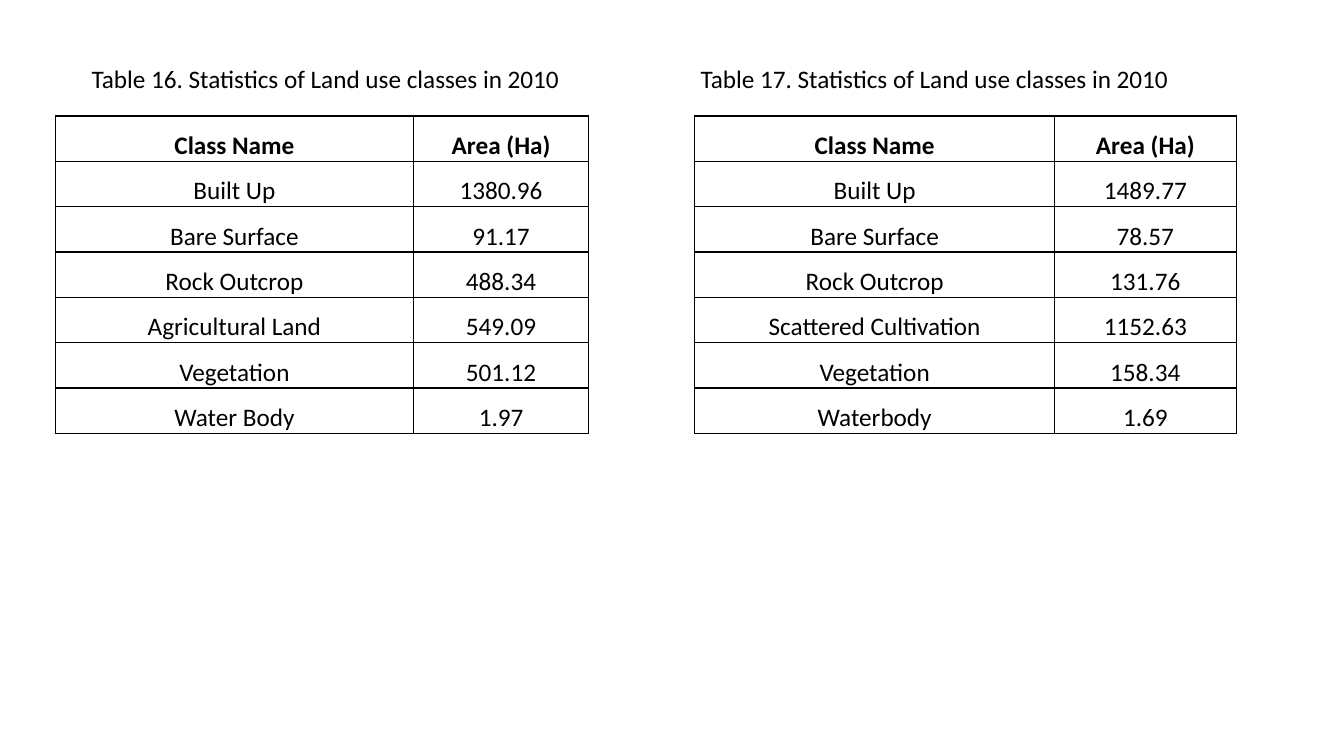
"""Build a slide with two land use tables, each under its caption."""
from lxml.etree import SubElement
from pptx import Presentation
from pptx.dml.color import RGBColor
from pptx.enum.text import MSO_ANCHOR, MSO_AUTO_SIZE, PP_ALIGN
from pptx.oxml.ns import qn
from pptx.util import Inches, Pt

BLACK = RGBColor(0, 0, 0)
HEADER = ("Class Name", "Area (Ha)")
ROW_HEIGHT = 0.45
TABLE_TOP = 1.15
CAPTION_TOP = 0.58
CELL_FORMAT = {
    "vertical_anchor": MSO_ANCHOR.BOTTOM,
    "margin_left": Inches(0.07),
    "margin_right": Inches(0.07),
    "margin_top": 0,
    "margin_bottom": 0,
}
LAND_USE = [
    {
        "caption": "Table 16. Statistics of Land use classes in 2010",
        "caption_left": 0.81,
        "left": 0.55,
        "widths": (3.55, 1.74),
        "areas": [
            ("Built Up", "1380.96"),
            ("Bare Surface", "91.17"),
            ("Rock Outcrop", "488.34"),
            ("Agricultural Land", "549.09"),
            ("Vegetation", "501.12"),
            ("Water Body", "1.97"),
        ],
    },
    {
        "caption": "Table 17. Statistics of Land use classes in 2010",
        "caption_left": 6.85,
        "left": 6.89,
        "widths": (3.57, 1.8),
        "areas": [
            ("Built Up", "1489.77"),
            ("Bare Surface", "78.57"),
            ("Rock Outcrop", "131.76"),
            ("Scattered Cultivation", "1152.63"),
            ("Vegetation", "158.34"),
            ("Waterbody", "1.69"),
        ],
    },
]


def write(para, text, bold=False):
    """Add one run of black Calibri text to a paragraph."""
    span = para.add_run()
    span.text = text
    for name, value in {"name": "Calibri", "size": Pt(18), "bold": bold}.items():
        setattr(span.font, name, value)
    span.font.color.rgb = BLACK


def add_borders(cell):
    """Draw a thin black line on all four sides of a cell."""
    properties = cell._tc.get_or_add_tcPr()
    for side in ("a:lnL", "a:lnR", "a:lnT", "a:lnB"):
        line = SubElement(properties, qn(side), w=str(Pt(1)))
        fill = SubElement(line, qn("a:solidFill"))
        SubElement(fill, qn("a:srgbClr"), val=str(BLACK))


def fill_cell(cell, text, bold):
    """Format a cell and write its centred text."""
    for name, value in CELL_FORMAT.items():
        setattr(cell, name, value)
    add_borders(cell)
    cell.fill.background()
    para = cell.text_frame.paragraphs[0]
    para.alignment = PP_ALIGN.CENTER
    para.line_spacing = 1.15
    write(para, text, bold)


def add_area_table(page, left, widths, areas):
    """Add a bordered table of class names and areas."""
    rows = [HEADER, *areas]
    frame = page.shapes.add_table(
        len(rows), len(HEADER), Inches(left), Inches(TABLE_TOP),
        Inches(sum(widths)), Inches(ROW_HEIGHT * len(rows)))
    table = frame.table
    table.horz_banding = False
    for column, width in zip(table.columns, widths):
        column.width = Inches(width)
    for row_index, row in enumerate(rows):
        table.rows[row_index].height = Inches(ROW_HEIGHT)
        for column_index, text in enumerate(row):
            fill_cell(table.cell(row_index, column_index), text, row_index == 0)


def add_caption(page, left, text):
    """Add a one-line caption above a table."""
    box = page.shapes.add_textbox(
        Inches(left), Inches(CAPTION_TOP), Inches(4.9), Inches(0.4))
    box.text_frame.word_wrap = False
    box.text_frame.auto_size = MSO_AUTO_SIZE.SHAPE_TO_FIT_TEXT
    write(box.text_frame.paragraphs[0], text)


def main():
    """Build and save the deck."""
    deck = Presentation()
    deck.slide_width = Inches(13.33)
    deck.slide_height = Inches(7.5)
    page = deck.slides.add_slide(deck.slide_layouts.get_by_name("Blank"))
    for item in LAND_USE:
        add_area_table(page, item["left"], item["widths"], item["areas"])
        add_caption(page, item["caption_left"], item["caption"])
    deck.save("out.pptx")


if __name__ == "__main__":
    main()
